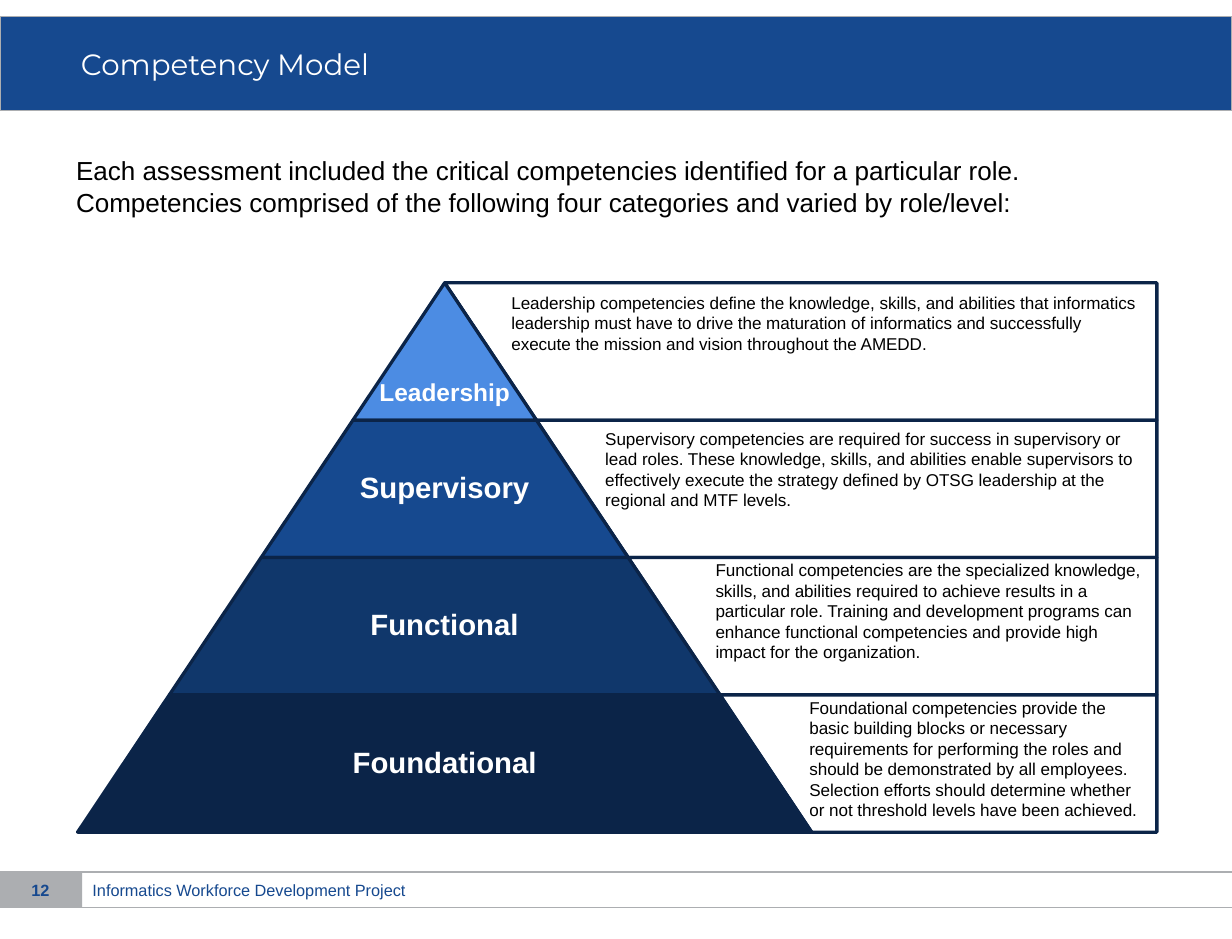
"""Builds the competency model slide with a four-tier pyramid."""
from typing import NamedTuple

from lxml.etree import SubElement
from pptx import Presentation
from pptx.dml.color import RGBColor
from pptx.enum.shapes import MSO_CONNECTOR, MSO_SHAPE
from pptx.enum.text import MSO_ANCHOR, MSO_AUTO_SIZE, PP_ALIGN
from pptx.oxml.ns import qn
from pptx.util import Inches, Pt

WHITE = RGBColor(0xFF, 0xFF, 0xFF)
BLACK = RGBColor(0x00, 0x00, 0x00)
GRAY = RGBColor(0xAC, 0xAE, 0xB1)
SKY = RGBColor(0x4C, 0x8C, 0xE3)
BLUE = RGBColor(0x16, 0x49, 0x8F)
DEEP = RGBColor(0x10, 0x37, 0x6B)
NAVY = RGBColor(0x0B, 0x24, 0x48)

WIDTH, HEIGHT = 10.5, 8
APEX, TOP, RIGHT = 3.79, 2.41, 9.86
ROW, STEP = 1.17, 0.782
SLOPE = STEP / ROW
FOOT_TOP, FOOT_H = 7.43, 0.3


class Box(NamedTuple):
    """A rectangle in inches."""
    x: float
    y: float
    w: float
    h: float


class Tier(NamedTuple):
    """One pyramid level and its description."""
    name: str
    color: RGBColor
    size: float
    note_x: float
    note_y: float
    note: str


TIERS = [
    Tier("Leadership", SKY, 15, 4.26, 2.44,
         "Leadership competencies define the knowledge, skills, and abilities that informatics "
         "leadership must have to drive the maturation of informatics and successfully execute "
         "the mission and vision throughout the AMEDD."),
    Tier("Supervisory", BLUE, 18, 5.06, 3.6,
         "Supervisory competencies are required for success in supervisory or lead roles. These "
         "knowledge, skills, and abilities enable supervisors to effectively execute the strategy "
         "defined by OTSG leadership at the regional and MTF levels."),
    Tier("Functional", DEEP, 18, 6, 4.72,
         "Functional competencies are the specialized knowledge, skills, and abilities required "
         "to achieve results in a particular role. Training and development programs can enhance "
         "functional competencies and provide high impact for the organization."),
    Tier("Foundational", NAVY, 18, 6.8, 5.89,
         "Foundational competencies provide the basic building blocks or necessary requirements "
         "for performing the roles and should be demonstrated by all employees. Selection efforts "
         "should determine whether or not threshold levels have been achieved."),
]


def write(tf, text: str, size: float, color: RGBColor, font: str = "Arial",
          bold: bool = False, align=PP_ALIGN.LEFT, spacing: float = 1.0) -> None:
    """Fill a text frame with one formatted run."""
    tf.word_wrap = True
    tf.auto_size = MSO_AUTO_SIZE.NONE
    p = tf.paragraphs[0]
    p.alignment, p.line_spacing = align, spacing
    r = p.add_run()
    r.text = text
    r.font.name, r.font.size, r.font.bold = font, Pt(size), bold
    r.font.color.rgb = color


def add_text(slide, box: Box, text: str, size: float, color: RGBColor, **style):
    """Add a wrapped text box and return its frame."""
    tf = slide.shapes.add_textbox(*map(Inches, box)).text_frame
    write(tf, text, size, color, **style)
    return tf


def add_block(slide, kind, box: Box, fill: RGBColor, line=None):
    """Add a flat preset shape."""
    sp = slide.shapes.add_shape(kind, *map(Inches, box))
    sp.shadow.inherit = False
    sp.fill.solid()
    sp.fill.fore_color.rgb = fill
    if line is None:
        sp.line.fill.background()
    else:
        sp.line.color.rgb, sp.line.width = line, Pt(2)
    return sp


def add_rule(slide, y: float) -> None:
    """Add a full-width gray rule."""
    cx = slide.shapes.add_connector(MSO_CONNECTOR.STRAIGHT, 0, Inches(y), Inches(WIDTH), Inches(y))
    cx.line.color.rgb, cx.line.width = GRAY, Pt(0.75)
    SubElement(cx._element.spPr, qn("a:effectLst"))


def add_title(slide, text: str) -> None:
    """Format the title placeholder as a banner."""
    sp = slide.shapes.title
    sp.left, sp.top, sp.width, sp.height = map(Inches, Box(0, 0.14, WIDTH, 0.8))
    sp.fill.solid()
    sp.fill.fore_color.rgb = BLUE
    sp.line.color.rgb, sp.line.width = GRAY, Pt(0.75)
    tf = sp.text_frame
    tf.margin_left = Inches(0.69)
    tf.vertical_anchor = MSO_ANCHOR.MIDDLE
    write(tf, text, 18, WHITE, font="Montserrat")


def add_footer(slide, number: str, text: str) -> None:
    """Add the footer band, its rules and its text."""
    add_block(slide, MSO_SHAPE.RECTANGLE, Box(0, FOOT_TOP, 0.7, FOOT_H), GRAY)
    for y in (FOOT_TOP, FOOT_TOP + FOOT_H):
        add_rule(slide, y)
    add_text(slide, Box(0.69, 7.47, 6.5, 0.22), text, 10, BLUE, spacing=0.9)
    add_text(slide, Box(0.04, 7.45, 0.61, 0.27), number, 10, BLUE, bold=True,
             align=PP_ALIGN.CENTER)


def add_tier(slide, row: int, tier: Tier) -> None:
    """Add one pyramid level with its frame and label."""
    y, half = TOP + row * ROW, (row + 1) * STEP
    left = APEX + row * STEP
    frame = add_block(slide, MSO_SHAPE.NON_ISOSCELES_TRAPEZOID,
                      Box(left, y, RIGHT - left, ROW), WHITE, NAVY)
    frame.rotation = 180
    frame.adjustments[0], frame.adjustments[1] = 0, SLOPE
    level = add_block(slide, MSO_SHAPE.TRAPEZOID, Box(APEX - half, y, 2 * half, ROW),
                      tier.color, NAVY)
    level.adjustments[0] = SLOPE
    label_w = max(2 * STEP, 1.3 * half)
    tf = add_text(slide, Box(APEX - label_w / 2, y, label_w, ROW), tier.name, tier.size, WHITE,
                  bold=True, align=PP_ALIGN.CENTER, spacing=0.9)
    tf.margin_left = tf.margin_right = tf.margin_top = tf.margin_bottom = Inches(0.03)
    tf.vertical_anchor = MSO_ANCHOR.MIDDLE
    if row == 0:
        tf.vertical_anchor = MSO_ANCHOR.BOTTOM
        tf.margin_bottom = Inches(0.11)


def main() -> None:
    """Build and save the slide."""
    prs = Presentation()
    prs.slide_width, prs.slide_height = Inches(WIDTH), Inches(HEIGHT)
    slide = prs.slides.add_slide(prs.slide_layouts[5])
    add_title(slide, "Competency Model")
    add_footer(slide, "12", "Informatics Workforce Development Project")
    add_text(slide, Box(0.55, 1.27, 9.45, 0.7),
             "Each assessment included the critical competencies identified for a particular "
             "role. Competencies comprised of the following four categories and varied by "
             "role/level:", 16, BLACK)
    for row, tier in enumerate(TIERS):
        add_tier(slide, row, tier)
    for tier in TIERS:
        add_text(slide, Box(tier.note_x, tier.note_y, RIGHT - tier.note_x + 0.01, ROW),
                 tier.note, 10.5, BLACK)
    prs.save("out.pptx")


if __name__ == "__main__":
    main()
